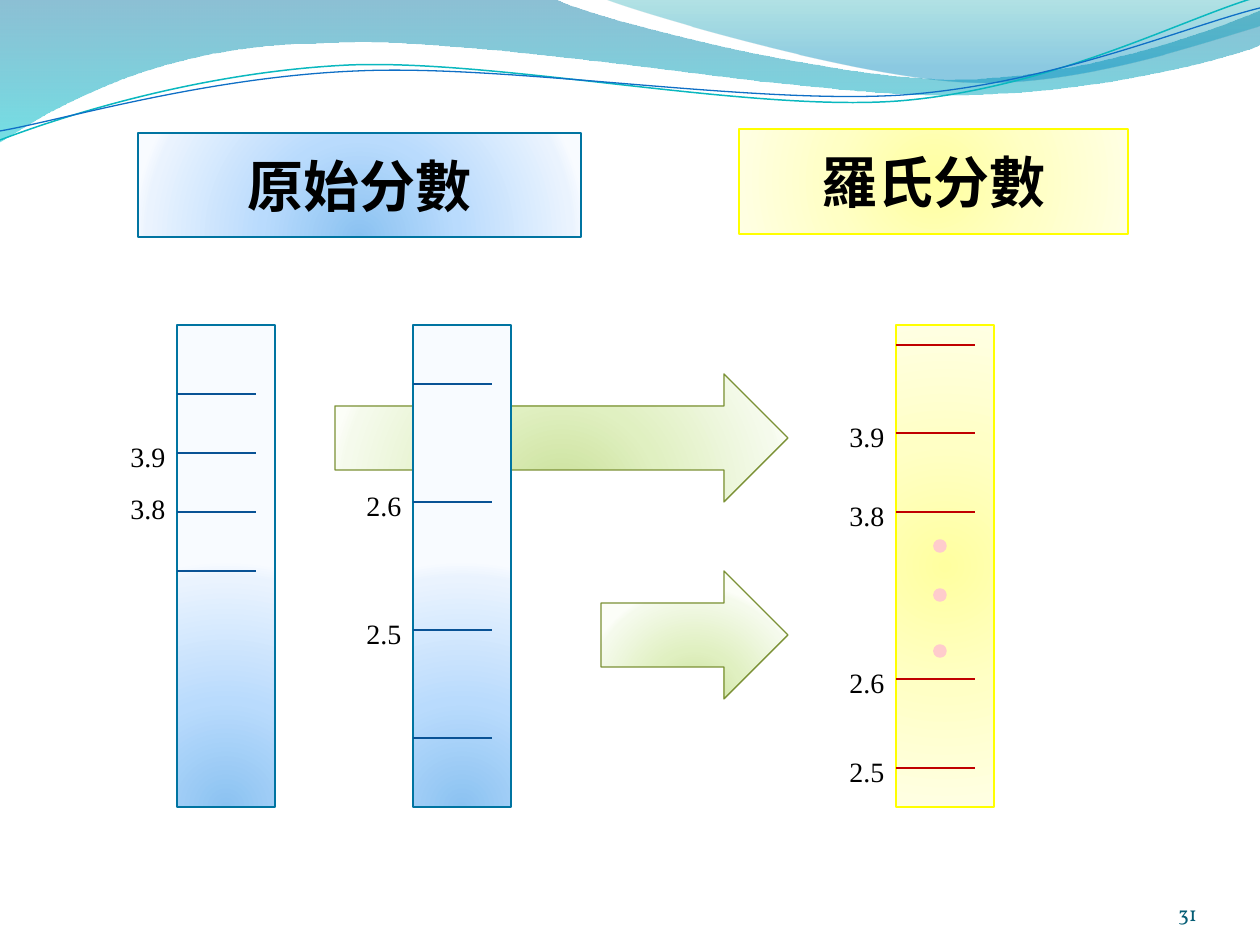
from pptx import Presentation
from pptx import util as u
from pptx.dml.color import RGBColor
from pptx.enum import shapes, text
from pptx.oxml import parse_xml
from pptx.oxml.ns import nsdecls, qn

PX = 914400 / 126

BLACK = RGBColor(0x00, 0x00, 0x00)
PAGE_TEAL = RGBColor(0x04, 0x5D, 0x75)
BLUE_EDGE = RGBColor(0x00, 0x74, 0xA1)
BLUE_TICK = RGBColor(0x09, 0x52, 0x95)
YELLOW_EDGE = RGBColor(0xFF, 0xFF, 0x00)
RED_TICK = RGBColor(0xC0, 0x00, 0x00)
GREEN_EDGE = RGBColor(0x7B, 0x91, 0x35)
PINK = RGBColor(0xFF, 0xCC, 0xCC)
WAVE_TEAL = RGBColor(0x0A, 0xB8, 0xBF)
WAVE_BLUE = RGBColor(0x0F, 0x6F, 0xC6)
BAND_LEFT = [(0, RGBColor(0x00, 0x74, 0xA1), 45), (100, RGBColor(0x00, 0xC6, 0xCF), 55)]
BAND_RIGHT = [(0, RGBColor(0x00, 0xA1, 0xA9), 30), (80, RGBColor(0x00, 0x8B, 0xBF), 45)]


def glow_stops(positions, *colours):
    return [(pos, colour, 100) for pos, colour in zip(positions, colours)]


# Each glow: gradient stops and the left, top, right, bottom of its focus in percent
LOW_FOCUS, MID_FOCUS = (50, 130, 50, -30), (50, 50, 50, 50)
BLUE_GLOW = (glow_stops((0, 43, 93, 100),
                        RGBColor(0x8B, 0xC2, 0xF1), RGBColor(0xB9, 0xDB, 0xFD),
                        RGBColor(0xEA, 0xF3, 0xFE), RGBColor(0xF8, 0xFB, 0xFF)), LOW_FOCUS)
GREEN_GLOW = (glow_stops((0, 43, 93, 100),
                         RGBColor(0xC9, 0xDF, 0x97), RGBColor(0xE0, 0xF0, 0xC1),
                         RGBColor(0xF5, 0xFA, 0xEC), RGBColor(0xFC, 0xFE, 0xF8)), LOW_FOCUS)
YELLOW_GLOW = (glow_stops((0, 50, 100),
                          RGBColor(0xFF, 0xFF, 0xA0), RGBColor(0xFF, 0xFF, 0xC5),
                          RGBColor(0xFF, 0xFF, 0xE3)), MID_FOCUS)

HEADING = {"name": "Vollkorn", "size": u.Pt(32), "bold": True}
LABEL = {"name": "Times New Roman", "size": u.Pt(16)}
PAGE = {"name": "Vollkorn", "size": u.Pt(12)}


def emu(*lengths):
    return [u.Emu(round(length * PX)) for length in lengths]


def fill_gradient(shape, stops, focus=None):
    """Fade from top to bottom, or outwards from a focus if one is given."""
    stop_xml = "".join(
        f'<a:gs pos="{pos * 1000}"><a:srgbClr val="{colour}">'
        f'<a:alpha val="{opacity * 1000}"/></a:srgbClr></a:gs>'
        for pos, colour, opacity in stops)
    if focus:
        sides = " ".join(f'{side}="{value * 1000}"' for side, value in zip("ltrb", focus))
        direction = f'<a:path path="circle"><a:fillToRect {sides}/></a:path>'
    else:
        direction = '<a:lin ang="5400000" scaled="0"/>'
    gradient = parse_xml(f'<a:gradFill {nsdecls("a")} rotWithShape="1">'
                         f'<a:gsLst>{stop_xml}</a:gsLst>{direction}</a:gradFill>')
    shape.fill.background()
    properties = shape._element.spPr
    properties.replace(properties.find(qn("a:noFill")), gradient)


def set_line(item, colour, width=0.75):
    item.line.color.rgb = colour
    item.line.width = u.Pt(width)


def write(frame, words, font_format, colour=BLACK, align=text.PP_ALIGN.LEFT):
    frame.word_wrap = True
    paragraph = frame.paragraphs[0]
    paragraph.alignment = align
    run = paragraph.add_run()
    run.text = words
    run.font.color.rgb = colour
    for attribute, value in font_format.items():
        setattr(run.font, attribute, value)


def add_glowing(canvas, kind, box, glow, edge):
    shape = canvas.add_shape(kind, *emu(*box))
    shape.shadow.inherit = False
    fill_gradient(shape, *glow)
    set_line(shape, edge)
    return shape


def add_wave(canvas, start, segments, close):
    """Draw an outline; a pair is a straight step, six numbers a Bezier curve."""
    anchors = [segment[-2:] for segment in segments]
    builder = canvas.build_freeform(*start, scale=PX)
    builder.add_line_segments(anchors, close=close)
    wave = builder.convert_to_shape()
    wave.shadow.inherit = False

    left, top = (min(values) for values in zip(start, *anchors))
    steps = list(wave._element.spPr.iter(qn("a:lnTo")))
    for step, segment in zip(steps, segments):
        if len(segment) == 6:
            knots = "".join(f'<a:pt x="{x - left}" y="{y - top}"/>'
                            for x, y in zip(segment[::2], segment[1::2]))
            curve = parse_xml(f'<a:cubicBezTo {nsdecls("a")}>{knots}</a:cubicBezTo>')
            step.getparent().replace(step, curve)
    return wave


def add_wave_header(canvas):
    bands = [
        (BAND_LEFT, (0, -1), [(554, -1), (600, 21, 837, 79, 955, 79),
                              (1075, 79, 1207, 33, 1260, 11), (1261, 45),
                              (1239, 55, 1096, 96, 940, 95), (784, 94, 481, 35, 324, 43),
                              (161, 44, 58, 105, -1, 142)]),
        (BAND_RIGHT, (604, -1), [(641, 14, 859, 78, 969, 82),
                                 (1079, 87, 1211, 40, 1260, 26), (1260, 0)]),
    ]
    for stops, start, segments in bands:
        band = add_wave(canvas, start, segments, True)
        fill_gradient(band, stops)
        band.line.fill.background()

    strands = [
        (WAVE_TEAL, 0.85, (0, 140), [(60, 117, 199, 72, 349, 65), (498, 59, 747, 112, 898, 101),
                                     (1050, 89, 1182, 19, 1257, -3)]),
        (WAVE_BLUE, 0.75, (0, 131), [(59, 121, 206, 77, 357, 71), (508, 64, 752, 105, 903, 95),
                                     (1053, 84, 1187, 26, 1260, 8)]),
    ]
    strand_group = canvas.add_group_shape().shapes
    for colour, width, start, segments in strands:
        strand = add_wave(strand_group, start, segments, False)
        strand.fill.background()
        set_line(strand, colour, width)


def add_heading(canvas, box, words, glow, edge):
    heading = add_glowing(canvas, shapes.MSO_SHAPE.RECTANGLE, box, glow, edge)
    heading.text_frame.vertical_anchor = text.MSO_ANCHOR.MIDDLE
    write(heading.text_frame, words, HEADING, align=text.PP_ALIGN.CENTER)


def add_scale(canvas, box, glow, edge, tick_colour, ticks, labels, dots=()):
    """Ticks, label tops and dots are measured down from the top of the bar."""
    left, top, width, _ = box
    add_glowing(canvas, shapes.MSO_SHAPE.RECTANGLE, box, glow, edge)
    for tick in ticks:
        line = canvas.add_connector(shapes.MSO_CONNECTOR.STRAIGHT,
                                    *emu(left, top + tick, left + width - 19, top + tick))
        set_line(line, tick_colour)
        line._element.spPr.append(parse_xml(f'<a:effectLst {nsdecls("a")}/>'))
    for score, drop in labels:
        label = canvas.add_textbox(*emu(left - 59, top + drop, 78, 46))
        write(label.text_frame, score, LABEL)
        label.text_frame.auto_size = text.MSO_AUTO_SIZE.SHAPE_TO_FIT_TEXT
    for drop in dots:
        dot = canvas.add_shape(shapes.MSO_SHAPE.OVAL, *emu(left + 39, top + drop, 10, 10))
        dot.shadow.inherit = False
        dot.fill.solid()
        dot.fill.fore_color.rgb = PINK
        set_line(dot, PINK, 2)


def add_page_number(canvas, box, number):
    frame = canvas.add_textbox(*emu(*box)).text_frame
    for side in ("left", "top", "right", "bottom"):
        setattr(frame, f"margin_{side}", 0)
    frame.vertical_anchor = text.MSO_ANCHOR.BOTTOM
    write(frame, number, PAGE, PAGE_TEAL, text.PP_ALIGN.RIGHT)


def main():
    deck = Presentation()
    deck.slide_width, deck.slide_height = emu(1260, 945)
    canvas = deck.slides.add_slide(deck.slide_layouts[6]).shapes
    blue = (BLUE_GLOW, BLUE_EDGE)
    yellow = (YELLOW_GLOW, YELLOW_EDGE)
    arrow = shapes.MSO_SHAPE.RIGHT_ARROW

    add_wave_header(canvas)
    add_glowing(canvas, arrow, (335, 374, 453, 128), GREEN_GLOW, GREEN_EDGE)
    add_page_number(canvas, (1092, 876, 105, 50), "31")
    add_heading(canvas, (138, 133, 443, 104), "原始分數", *blue)
    add_heading(canvas, (739, 129, 389, 105), "羅氏分數", *yellow)
    add_scale(canvas, (177, 325, 98, 482), *blue, BLUE_TICK,
              range(69, 247, 59), [("3.9", 108), ("3.8", 160)])
    add_scale(canvas, (413, 325, 98, 482), *blue, BLUE_TICK,
              (59, 177, 305, 413), [("2.6", 157), ("2.5", 285)])
    add_glowing(canvas, arrow, (601, 571, 187, 128), GREEN_GLOW, GREEN_EDGE)
    add_scale(canvas.add_group_shape().shapes, (896, 325, 98, 482), *yellow, RED_TICK,
              (20, 108, 187, 354, 443),
              [("3.9", 88), ("3.8", 167), ("2.6", 334), ("2.5", 423)], (216, 265, 321))
    deck.save("out.pptx")


if __name__ == "__main__":
    main()
